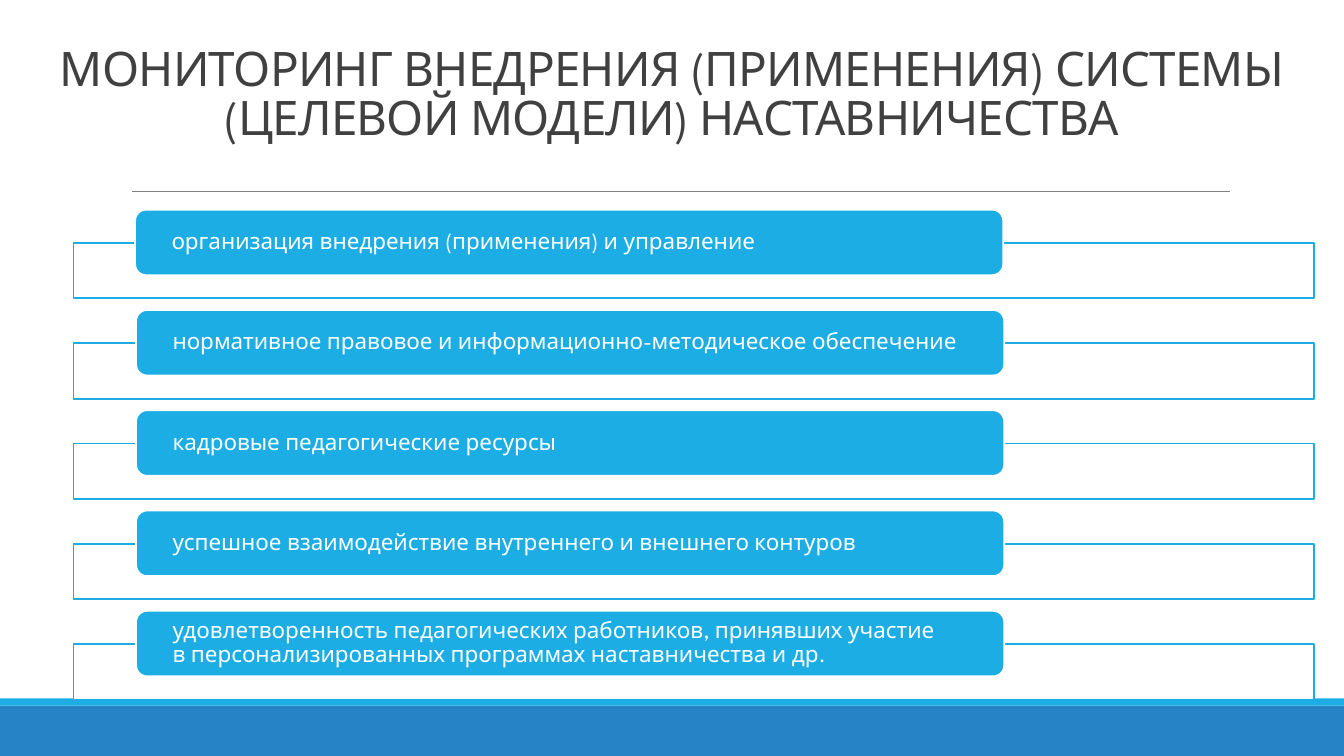
from lxml.etree import SubElement
from pptx import Presentation
from pptx.dml.color import RGBColor
from pptx.enum.shapes import MSO_CONNECTOR, MSO_SHAPE
from pptx.enum.text import MSO_ANCHOR, MSO_AUTO_SIZE, PP_ALIGN
from pptx.oxml.ns import qn
from pptx.util import Inches, Pt

SKY = RGBColor(0x1C, 0xAD, 0xE4)
BLUE = RGBColor(0x26, 0x83, 0xC6)
WHITE = RGBColor(0xFF, 0xFF, 0xFF)
DARK = RGBColor(0x40, 0x40, 0x40)
GREY = RGBColor(0x80, 0x80, 0x80)
FONT = "League Spartan"

TITLE = "МОНИТОРИНГ ВНЕДРЕНИЯ (ПРИМЕНЕНИЯ) СИСТЕМЫ (ЦЕЛЕВОЙ МОДЕЛИ) НАСТАВНИЧЕСТВА"
DIRECTIONS = [
    "организация внедрения (применения) и управление",
    "нормативное правовое и информационно-методическое обеспечение",
    "кадровые педагогические ресурсы",
    "успешное взаимодействие внутреннего и внешнего контуров",
    "удовлетворенность педагогических работников, принявших участие \v"
    "в персонализированных программах наставничества и др.",
]
FIRST_TOP = 2.08
STEP = 0.995


def write(shape, text, *, size, color, align, anchor, spacing, inset, margin=0.0, tracking=0):
    """Put formatted text into a shape."""
    frame = shape.text_frame
    frame.word_wrap = True
    frame.auto_size = MSO_AUTO_SIZE.NONE
    frame.vertical_anchor = anchor
    frame.margin_left = frame.margin_right = Inches(inset)
    frame.margin_top = frame.margin_bottom = Inches(margin)
    paragraph = frame.paragraphs[0]
    paragraph.text = text
    paragraph.alignment = align
    paragraph.line_spacing = spacing
    for run in paragraph.runs:
        run.font.name = FONT
        run.font.size = Pt(size)
        run.font.color.rgb = color
        run.font._element.set("spc", str(tracking))


def add_block(slide, kind, left, top, width, height, fill, line=None):
    """Add a filled preset shape without a shadow."""
    block = slide.shapes.add_shape(kind, Inches(left), Inches(top), Inches(width), Inches(height))
    block.shadow.inherit = False
    block.fill.solid()
    block.fill.fore_color.rgb = fill
    if line is None:
        block.line.fill.background()
    else:
        block.line.color.rgb = line
        block.line.width = Pt(1.25)
    return block


def add_rule(slide, left, right, y):
    """Add the thin line under the title."""
    rule = slide.shapes.add_connector(
        MSO_CONNECTOR.STRAIGHT, Inches(left), Inches(y), Inches(right), Inches(y))
    rule.line.color.rgb = GREY
    rule.line.width = Pt(0.5)
    SubElement(rule._element.spPr, qn("a:effectLst"))


def add_title(slide):
    """Place and format the title."""
    title = slide.shapes.title
    title.left, title.top = Inches(0.3), Inches(-0.14)
    title.width, title.height = Inches(12.73), Inches(1.63)
    write(title, TITLE, size=34, color=DARK, align=PP_ALIGN.CENTER,
          anchor=MSO_ANCHOR.BOTTOM, spacing=0.85, inset=0.1, margin=0.05, tracking=-50)


def add_direction(slide, text, left, top):
    """Add one monitoring direction: an outlined frame with a label over it."""
    frame = add_block(slide, MSO_SHAPE.RECTANGLE, 0.73, top + 0.33, 12.3, 0.55, WHITE, SKY)
    white = frame.fill._xPr.find(qn("a:solidFill"))[0]
    SubElement(white, qn("a:alpha"), val="90000")
    label = add_block(slide, MSO_SHAPE.ROUNDED_RECTANGLE, left, top, 8.61, 0.65, SKY, WHITE)
    write(label, text, size=16, color=WHITE, align=PP_ALIGN.LEFT,
          anchor=MSO_ANCHOR.MIDDLE, spacing=0.9, inset=0.33)


def main():
    """Build the slide and save it."""
    deck = Presentation()
    deck.slide_width, deck.slide_height = Inches(13.33), Inches(7.5)
    slide = deck.slides.add_slide(deck.slide_layouts[5])
    add_block(slide, MSO_SHAPE.RECTANGLE, 0, 7, 13.33, 0.5, BLUE)
    add_block(slide, MSO_SHAPE.RECTANGLE, 0, 6.93, 13.33, 0.07, SKY)
    add_rule(slide, 1.31, 12.2, 1.9)
    add_title(slide)
    for row, text in enumerate(DIRECTIONS):
        add_direction(slide, text, 1.35 if row else 1.34, FIRST_TOP + row * STEP)
    deck.save("out.pptx")


if __name__ == "__main__":
    main()
